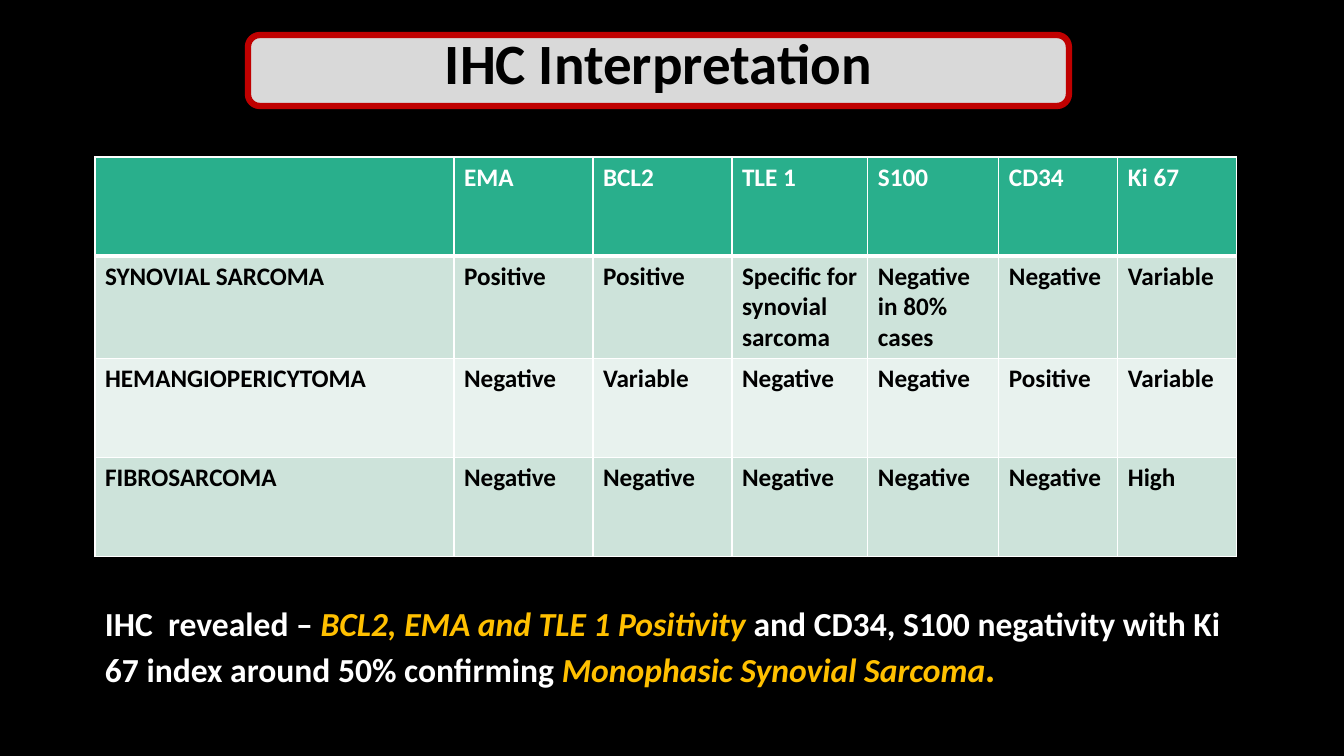
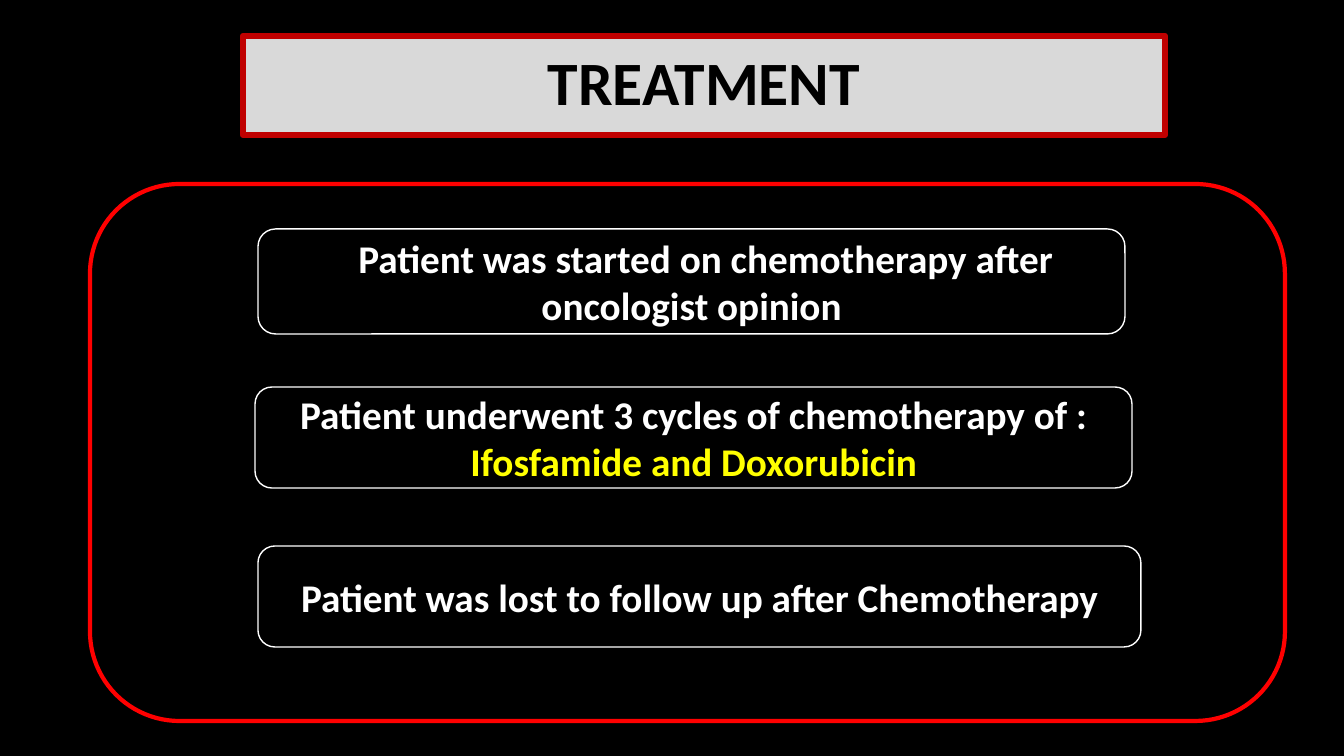
"""Build two clinical slides: an IHC marker table and the treatment course."""
import dataclasses

import lxml.etree
import pptx
import pptx.dml.color
import pptx.enum.shapes
import pptx.enum.text
import pptx.oxml.ns
import pptx.util

SLIDE_WIDTH, SLIDE_HEIGHT = 1344, 756
EMU_PER_PX = 12192000 / SLIDE_WIDTH
FONT = "Calibri"
BLACK, WHITE, GREY = "000000", "FFFFFF", "D9D9D9"
CRIMSON, RED, GOLD, YELLOW = "C00000", "FF0000", "FFC000", "FFFF00"
GREEN, MINT, PALE_MINT = "29AF8C", "CDE3DA", "E8F2EE"
ROUNDED = pptx.enum.shapes.MSO_SHAPE.ROUNDED_RECTANGLE
SQUARE = pptx.enum.shapes.MSO_SHAPE.RECTANGLE
CENTER = pptx.enum.text.PP_ALIGN.CENTER
LEFT = pptx.enum.text.PP_ALIGN.LEFT

COLUMN_WIDTHS = (359, 139, 139, 136, 131, 119, 119)
ROW_HEIGHT = 99
MARKER_ROWS = (
    ("", "EMA", "BCL2", "TLE 1", "S100", "CD34", "Ki 67"),
    ("SYNOVIAL SARCOMA", "Positive", "Positive", "Specific for synovial sarcoma",
     "Negative in 80% cases", "Negative", "Variable"),
    ("HEMANGIOPERICYTOMA", "Negative", "Variable", "Negative", "Negative", "Positive", "Variable"),
    ("FIBROSARCOMA", "Negative", "Negative", "Negative", "Negative", "Negative", "High"),
)


@dataclasses.dataclass(frozen=True)
class Span:
    text: str
    size: float
    color: str = WHITE
    italic: bool = False


@dataclasses.dataclass(frozen=True)
class Para:
    spans: tuple[Span, ...]
    align: int = CENTER
    spacing: float = 1.0
    indent: int = 0


@dataclasses.dataclass(frozen=True)
class Area:
    left: int
    top: int
    width: int
    height: int


@dataclasses.dataclass(frozen=True)
class Panel:
    area: Area
    line: str = WHITE
    weight: float = 1
    fill: str = BLACK
    paras: tuple[Para, ...] = ()
    outline: int = ROUNDED


CONCLUSION = Para((
    Span("IHC  revealed – ", 24),
    Span("BCL2, EMA and TLE 1 Positivity ", 24, GOLD, True),
    Span("and CD34, S100 negativity with Ki 67 index around 50% confirming ", 24),
    Span("Monophasic Synovial Sarcoma", 24, GOLD, True),
    Span(".", 28, GOLD, True),
), LEFT)

TREATMENT_PANELS = (
    Panel(Area(90, 184, 1195, 537), RED, 3),
    Panel(Area(258, 229, 867, 105), paras=(
        Para((Span("Patient was started on chemotherapy after", 28),), indent=28),
        Para((Span("oncologist opinion", 28),)),
    )),
    Panel(Area(255, 387, 877, 101), paras=(
        Para((Span("Patient underwent 3 cycles of chemotherapy of :", 28),)),
        Para((Span("Ifosfamide and Doxorubicin", 28, YELLOW),)),
    )),
    Panel(Area(258, 546, 883, 101), paras=(
        Para((Span("Patient was lost to follow up after Chemotherapy", 28),)),
    )),
)


def px(length: int) -> pptx.util.Emu:
    """Turn pixels into EMU."""
    return pptx.util.Emu(round(length * EMU_PER_PX))


def place(area: Area) -> tuple[pptx.util.Emu, ...]:
    """Give the left, top, width and height of an area in EMU."""
    return tuple(px(length) for length in dataclasses.astuple(area))


def rgb(color: str) -> pptx.dml.color.RGBColor:
    """Turn a hex string into a colour."""
    return pptx.dml.color.RGBColor.from_string(color)


def paint(fill, color: str) -> None:
    """Make a fill solid in one colour."""
    fill.solid()
    fill.fore_color.rgb = rgb(color)


def write(frame, paras: tuple[Para, ...]) -> None:
    """Fill a text frame run by run."""
    frame.word_wrap = True
    for index, item in enumerate(paras):
        para = frame.add_paragraph() if index else frame.paragraphs[0]
        para.alignment = item.align
        para.line_spacing = item.spacing
        if item.indent:
            para._p.get_or_add_pPr().set("marL", str(px(item.indent)))
        for part in item.spans:
            span = para.add_run()
            span.text = part.text
            span.font.name = FONT
            span.font.size = pptx.util.Pt(part.size)
            span.font.bold = True
            span.font.italic = part.italic
            span.font.color.rgb = rgb(part.color)


def draw_panel(page, panel: Panel) -> None:
    """Draw a filled, outlined panel with its text."""
    box = page.shapes.add_shape(panel.outline, *place(panel.area))
    box.shadow.inherit = False
    paint(box.fill, panel.fill)
    box.line.color.rgb = rgb(panel.line)
    box.line.width = pptx.util.Pt(panel.weight)
    box.text_frame.vertical_anchor = pptx.enum.text.MSO_ANCHOR.MIDDLE
    write(box.text_frame, panel.paras)


def draw_title(page, text: str, area: Area, size: float, spacing: float, outline: int) -> None:
    """Draw the grey title band with its crimson edge."""
    para = Para((Span(text, size, BLACK),), spacing=spacing)
    draw_panel(page, Panel(area, CRIMSON, 4.5, GREY, (para,), outline))


def add_border(cell, side: str, weight: float) -> None:
    """Draw one white border of a table cell."""
    name = pptx.oxml.ns.qn
    border = lxml.etree.SubElement(cell._tc.get_or_add_tcPr(), name(f"a:ln{side}"),
                                   w=str(pptx.util.Pt(weight)))
    solid = lxml.etree.SubElement(border, name("a:solidFill"))
    lxml.etree.SubElement(solid, name("a:srgbClr"), val=WHITE)


def draw_marker_table(page, left: int, top: int) -> None:
    """Draw the table of markers by tumour."""
    area = Area(left, top, sum(COLUMN_WIDTHS), ROW_HEIGHT * len(MARKER_ROWS))
    table = page.shapes.add_table(len(MARKER_ROWS), len(COLUMN_WIDTHS), *place(area)).table
    for column, width in zip(table.columns, COLUMN_WIDTHS):
        column.width = px(width)
    for row, texts in enumerate(MARKER_ROWS):
        table.rows[row].height = px(ROW_HEIGHT)
        fill = GREEN if row == 0 else (PALE_MINT, MINT)[row % 2]
        weights = {"L": 1, "R": 1, "T": 3 if row == 1 else 1, "B": 3 if row == 0 else 1}
        for column, text in enumerate(texts):
            cell = table.cell(row, column)
            for side, weight in weights.items():
                add_border(cell, side, weight)
            paint(cell.fill, fill)
            if text:
                span = Span(text, 18, BLACK if row else WHITE)
                write(cell.text_frame, (Para((span,), LEFT),))


def build_interpretation(page) -> None:
    """Build the slide of IHC findings."""
    draw_marker_table(page, 95, 157)
    box = page.shapes.add_textbox(*place(Area(95, 598, 1159, 99)))
    write(box.text_frame, (CONCLUSION,))
    draw_title(page, "IHC Interpretation", Area(248, 35, 821, 71), 40.7, 0.7, ROUNDED)


def build_treatment(page) -> None:
    """Build the slide of the treatment course."""
    for panel in TREATMENT_PANELS:
        draw_panel(page, panel)
    draw_title(page, "TREATMENT", Area(243, 36, 922, 99), 44, 0.9, SQUARE)


def main() -> None:
    """Build and save the deck."""
    deck = pptx.Presentation()
    deck.slide_width, deck.slide_height = px(SLIDE_WIDTH), px(SLIDE_HEIGHT)
    paint(deck.slide_master.background.fill, BLACK)
    for build in (build_interpretation, build_treatment):
        build(deck.slides.add_slide(deck.slide_layouts[6]))
    deck.save("out.pptx")


if __name__ == "__main__":
    main()
